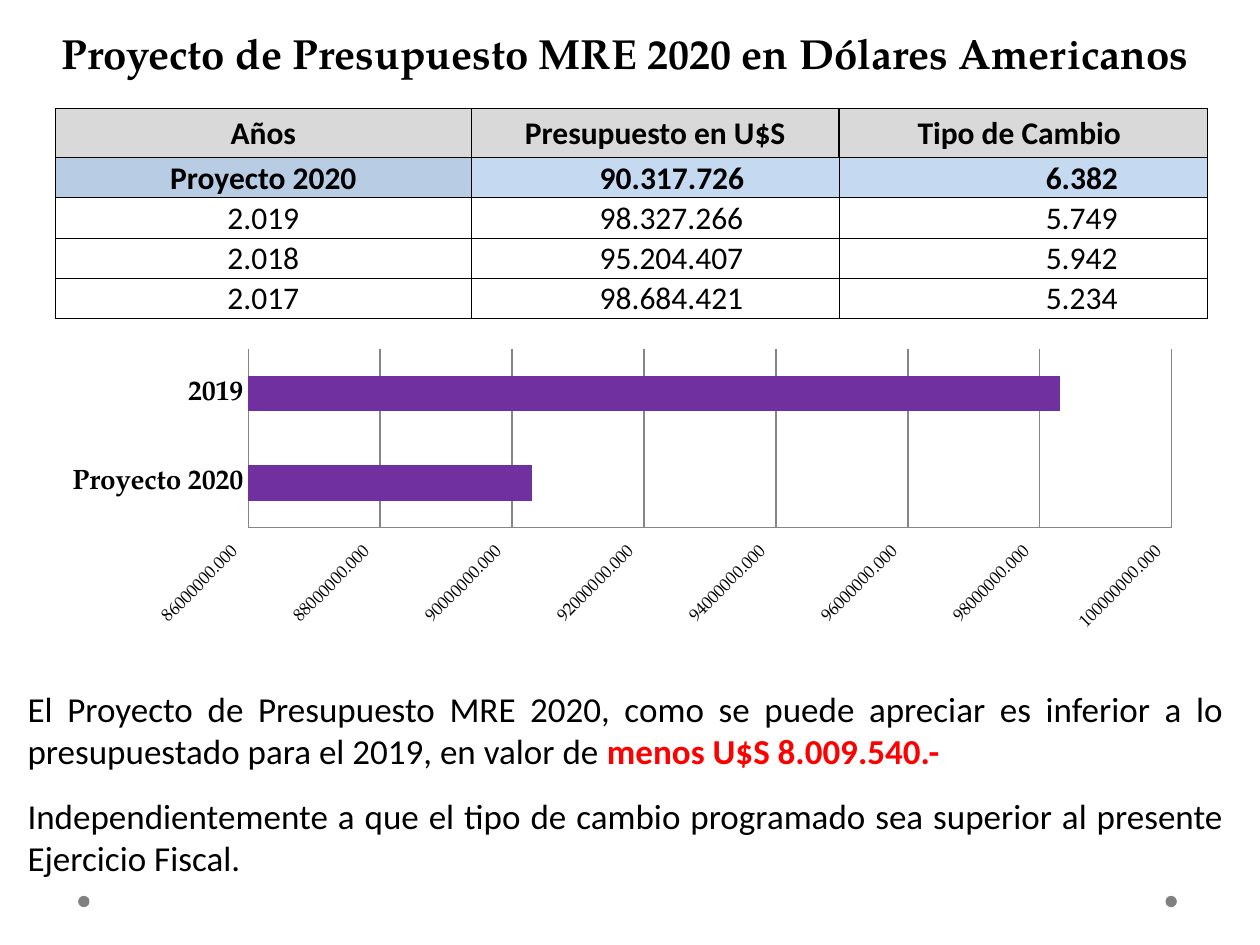
import pptx
import pptx.chart.data
import pptx.dml.color
import pptx.enum.chart
import pptx.enum.shapes
import pptx.enum.text
import pptx.oxml
import pptx.oxml.ns
import pptx.util
from pptx.util import Inches

SERIF = "TeX Gyre Pagella"
SANS = "Calibri"
ALIGN = pptx.enum.text.PP_ALIGN
ANCHOR = pptx.enum.text.MSO_ANCHOR
TICKS = pptx.enum.chart.XL_TICK_MARK
ROWS = [
    ("Años", "Presupuesto en U$S", "Tipo de Cambio"),
    ("Proyecto 2020", "90.317.726", "6.382"),
    ("2.019", "98.327.266", "5.749"),
    ("2.018", "95.204.407", "5.942"),
    ("2.017", "98.684.421", "5.234"),
]
ROW_FILLS = {0: ("D9D9D9",) * 3, 1: ("B8CCE4", "C5D9F1", "C5D9F1")}
NUMBER_INDENTS = (0.01, 1.02, 1.64)
HEADER_RIGHT_MARGINS = (0.01, 0.01, 0.07)


def color(hex_value):
    return pptx.dml.color.RGBColor.from_string(hex_value)


def apply(target, values):
    for name, value in values.items():
        setattr(target, name, value)


def style_font(font, name, size, hex_value="000000", bold=False):
    apply(font, {"name": name, "size": pptx.util.Pt(size), "bold": bold})
    font.color.rgb = color(hex_value)


def add_run(paragraph, text, *style):
    run = paragraph.add_run()
    run.text = text
    style_font(run.font, *style)


def add_text(slide, box, paragraphs, alignment, anchor, gap=0):
    shape = slide.shapes.add_textbox(*map(Inches, box))
    frame = shape.text_frame
    apply(frame, {"word_wrap": True, "vertical_anchor": anchor})
    for index, runs in enumerate(paragraphs):
        paragraph = frame.add_paragraph() if index else frame.paragraphs[0]
        paragraph.alignment = alignment
        if index:
            paragraph.space_before = pptx.util.Pt(gap)
        for run in runs:
            add_run(paragraph, *run)


def add_dot(slide, left):
    shape = slide.shapes.add_shape(
        pptx.enum.shapes.MSO_SHAPE.OVAL, Inches(left), Inches(7.11), Inches(0.09), Inches(0.09))
    shape.shadow.inherit = False
    shape.fill.solid()
    shape.fill.fore_color.rgb = color("808080")
    shape.line.fill.background()


def add_borders(cell, widths):
    properties = cell._tc.get_or_add_tcPr()
    for position, (side, width) in enumerate(widths.items()):
        properties.insert(position, pptx.oxml.parse_xml(
            f'<a:{side} {pptx.oxml.ns.nsdecls("a")} w="{pptx.util.Pt(width)}">'
            '<a:solidFill><a:srgbClr val="000000"/></a:solidFill>'
            f'</a:{side}>'))


def border_widths(row, column):
    header = row == 0
    return {
        "lnL": 1 if header and column > 0 else 0.5,
        "lnR": 1 if header and column < 2 else 0.5,
        "lnT": 1 if row in (1, 2) else 0.5,
        "lnB": 1 if row <= 1 else 0.5,
    }


def fill_cell(cell, text, row, column):
    is_number = row > 0 and column > 0
    apply(cell, {
        "margin_left": Inches(NUMBER_INDENTS[column] if is_number else 0.01),
        "margin_right": Inches(0.01 if row else HEADER_RIGHT_MARGINS[column]),
        "margin_top": Inches(0.01),
        "margin_bottom": 0,
        "vertical_anchor": ANCHOR.MIDDLE,
    })
    paragraph = cell.text_frame.paragraphs[0]
    paragraph.alignment = ALIGN.LEFT if is_number else ALIGN.CENTER
    add_run(paragraph, text, SANS, 18, "000000", row <= 1)
    if row in ROW_FILLS:
        cell.fill.solid()
        cell.fill.fore_color.rgb = color(ROW_FILLS[row][column])
    else:
        cell.fill.background()
    add_borders(cell, border_widths(row, column))


def add_budget_table(slide):
    table = slide.shapes.add_table(
        len(ROWS), 3, Inches(0.44), Inches(0.86), Inches(9.13), Inches(1.67)).table
    apply(table, {"first_row": False, "horz_banding": False})
    for column, width in zip(table.columns, (3.3, 2.92, 2.92)):
        column.width = Inches(width)
    for row, texts in enumerate(ROWS):
        table.rows[row].height = Inches(0.32 if row else 0.39)
        for column, text in enumerate(texts):
            fill_cell(table.cell(row, column), text, row, column)


def set_plot_layout(chart, x, y, width, height):
    area = chart._chartSpace.chart.plotArea
    for layout in area.findall(pptx.oxml.ns.qn("c:layout")):
        area.remove(layout)
    sizes = {"x": x, "y": y, "w": width, "h": height}
    values = "".join(f'<c:{key} val="{value}"/>' for key, value in sizes.items())
    area.insert(0, pptx.oxml.parse_xml(
        f'<c:layout {pptx.oxml.ns.nsdecls("c")}><c:manualLayout><c:layoutTarget val="inner"/>'
        f'<c:xMode val="edge"/><c:yMode val="edge"/>{values}</c:manualLayout></c:layout>'))


def style_line(line):
    line.color.rgb = color("868686")
    line.width = pptx.util.Pt(0.75)


def add_budget_chart(slide):
    data = pptx.chart.data.CategoryChartData()
    data.categories = ["Proyecto 2020", "2019"]
    data.add_series("Presupuesto", [90300000, 98300000])
    chart = slide.shapes.add_chart(
        pptx.enum.chart.XL_CHART_TYPE.BAR_CLUSTERED,
        Inches(0.39), Inches(2.73), Inches(9.13), Inches(2.36), data).chart
    apply(chart, {"has_legend": False, "has_title": False})
    style_font(chart.font, SERIF, 10)
    plot = chart.plots[0]
    apply(plot, {"gap_width": 150, "vary_by_categories": False})
    bars = plot.series[0].format.fill
    bars.solid()
    bars.fore_color.rgb = color("7030A0")
    categories, values = chart.category_axis, chart.value_axis
    for axis, size, bold in ((categories, 16, True), (values, 10, False)):
        apply(axis, {"major_tick_mark": TICKS.NONE, "minor_tick_mark": TICKS.NONE})
        style_font(axis.tick_labels.font, SERIF, size, "000000", bold)
        style_line(axis.format.line)
    apply(values, {"minimum_scale": 86000000, "maximum_scale": 100000000,
                   "major_unit": 2000000, "has_major_gridlines": True})
    style_line(values.major_gridlines.format.line)
    apply(values.tick_labels, {"number_format": "_-* 0.000\\ _€_-",
                               "number_format_is_linked": False})
    values._element.find(pptx.oxml.ns.qn("c:txPr")).bodyPr.set("rot", "-2700000")
    set_plot_layout(chart, 0.173, 0.017, 0.803, 0.6)


def main():
    presentation = pptx.Presentation()
    apply(presentation, {"slide_width": Inches(10), "slide_height": Inches(7.5)})
    slide = presentation.slides.add_slide(presentation.slide_layouts[6])
    for left in (9.25, 0.62):
        add_dot(slide, left)
    title = "Proyecto de Presupuesto MRE 2020 en Dólares Americanos"
    add_text(slide, (-0.43, 0.15, 10.78, 0.52), [[(title, SERIF, 24, "000000", True)]],
             ALIGN.CENTER, ANCHOR.BOTTOM)
    add_budget_table(slide)
    add_text(slide, (0.12, 5.41, 9.69, 1.63), [
        [("El Proyecto de Presupuesto MRE 2020, como se puede apreciar es inferior a lo "
          "presupuestado para el 2019, en valor de ", SANS, 20),
         ("menos U$S 8.009.540.-", SANS, 20, "FF0000", True)],
        [("Independientemente a que el tipo de cambio programado sea superior al presente "
          "Ejercicio Fiscal.", SANS, 20)],
    ], ALIGN.JUSTIFY, ANCHOR.TOP, gap=13)
    add_budget_chart(slide)
    presentation.save("out.pptx")


if __name__ == "__main__":
    main()
